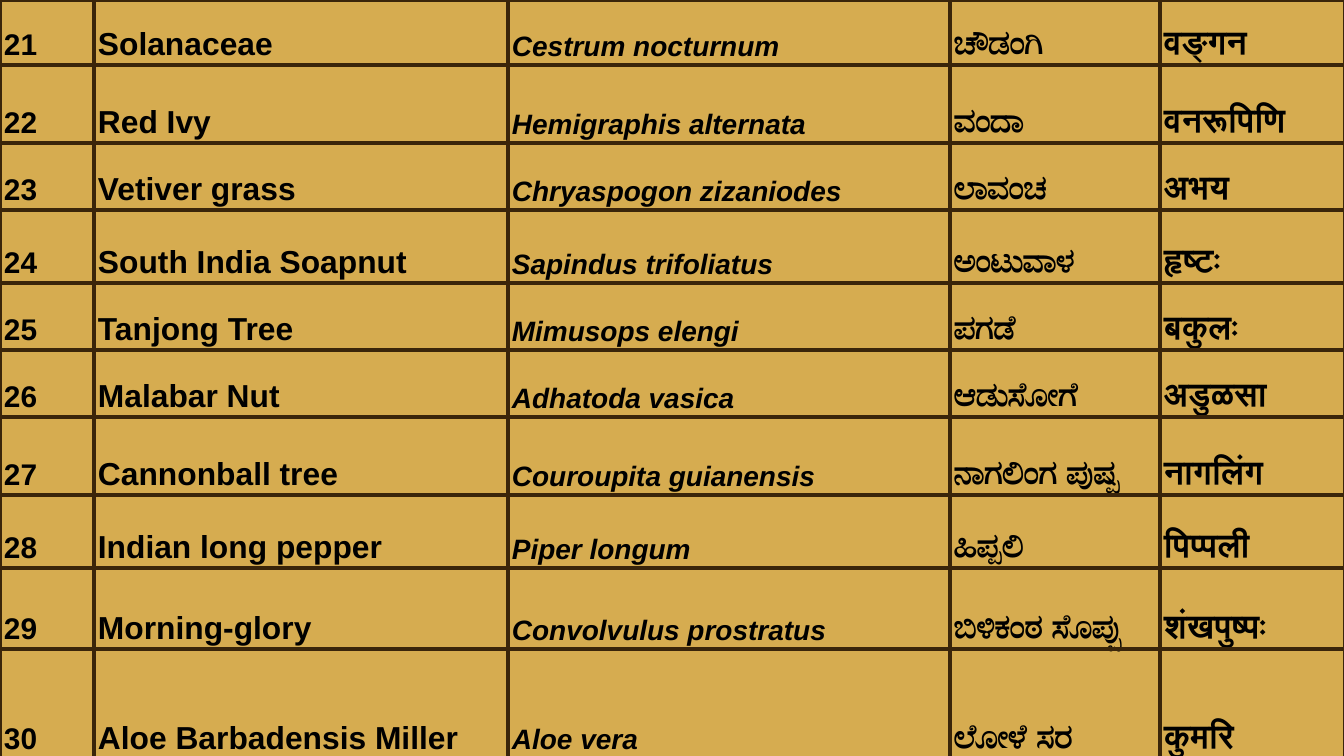
from dataclasses import dataclass

from lxml import etree
from pptx import Presentation
from pptx.dml.color import RGBColor
from pptx.enum.text import MSO_ANCHOR
from pptx.oxml.ns import qn
from pptx.util import Emu, Pt

BOTTOM = MSO_ANCHOR.BOTTOM
SCALE = 9144000 / 1344
WIDE, HIGH = 1344, 756


@dataclass(frozen=True)
class Theme:
    """Hold the colours, font and type sizes."""
    back: str = "D6AC50"
    ink: str = "000000"
    line: str = "3A250A"
    weight: float = 2.25
    font: str = "Arial"
    sizes: tuple = (16, 17, 15, 18, 18)
    space: float = 1.15


THEME = Theme()
LATIN = 2
COLS = (94, 414, 442, 210, 185)
ROWS = (65, 78, 67, 73, 67, 67, 78, 73, 81, 110)
FIRST = 21
PLANTS = (
    ("Solanaceae", "Cestrum nocturnum", "ಚೌಡಂಗಿ", "वङ्गन"),
    ("Red Ivy", "Hemigraphis alternata", "ವಂದಾ", "वनरूपिणि"),
    ("Vetiver grass", "Chryaspogon zizaniodes", "ಲಾವಂಚ", "अभय"),
    ("South India Soapnut", "Sapindus trifoliatus", "ಅಂಟುವಾಳ", "हृष्टः"),
    ("Tanjong Tree", "Mimusops elengi", "ಪಗಡೆ", "बकुलः"),
    ("Malabar Nut", "Adhatoda vasica", "ಆಡುಸೋಗೆ", "अडुळसा"),
    ("Cannonball tree", "Couroupita guianensis", "ನಾಗಲಿಂಗ ಪುಷ್ಪ", "नागलिंग"),
    ("Indian long pepper", "Piper longum", "ಹಿಪ್ಪಲಿ", "पिप्पली"),
    ("Morning-glory", "Convolvulus prostratus", "ಬಿಳಿಕಂಠ ಸೊಪ್ಪು", "शंखपुष्पः"),
    ("Aloe Barbadensis Miller", "Aloe vera", "ಲೋಳೆ ಸರ", "कुमरि"),
)


def px(count):
    """Turn px into EMU."""
    return Emu(round(count * SCALE))


def add_edges(cell):
    """Draw the four borders of a cell."""
    props = cell._tc.get_or_add_tcPr()
    for side in ("a:lnL", "a:lnR", "a:lnT", "a:lnB"):
        edge = etree.SubElement(props, qn(side), w=str(Pt(THEME.weight)))
        fill = etree.SubElement(edge, qn("a:solidFill"))
        etree.SubElement(fill, qn("a:srgbClr"), val=THEME.line)


def fill_cell(cell, text, col):
    """Write and format one cell by its column."""
    cell.vertical_anchor = BOTTOM
    cell.margin_left = cell.margin_right = px(4)
    cell.margin_top = cell.margin_bottom = px(3)
    add_edges(cell)
    cell.fill.background()
    cell.text_frame.text = text
    para = cell.text_frame.paragraphs[0]
    para.line_spacing = THEME.space
    run = para.runs[0]
    font = run.font
    font.size = Pt(THEME.sizes[col])
    font.bold = True
    font.italic = col == LATIN
    font.color.rgb = RGBColor.from_string(THEME.ink)
    font.name = THEME.font
    etree.SubElement(run._r.get_or_add_rPr(), qn("a:cs"), typeface=THEME.font)


def add_plants(slide, left, top):
    """Place the table of plant names."""
    frame = slide.shapes.add_table(
        len(ROWS), len(COLS), px(left), px(top), px(sum(COLS)), px(sum(ROWS)))
    table = frame.table
    table.first_row = table.horz_banding = False
    for col, width in zip(table.columns, COLS):
        col.width = px(width)
    for row, height in zip(table.rows, ROWS):
        row.height = px(height)
    for i, names in enumerate(PLANTS):
        for j, text in enumerate((str(FIRST + i), *names)):
            fill_cell(table.cell(i, j), text, j)


def main():
    """Build and save the slide."""
    deck = Presentation()
    deck.slide_width, deck.slide_height = px(WIDE), px(HIGH)
    slide = deck.slides.add_slide(deck.slide_layouts[6])
    back = slide.background.fill
    back.solid()
    back.fore_color.rgb = RGBColor.from_string(THEME.back)
    add_plants(slide, 0, 0)
    deck.save("out.pptx")


if __name__ == "__main__":
    main()
